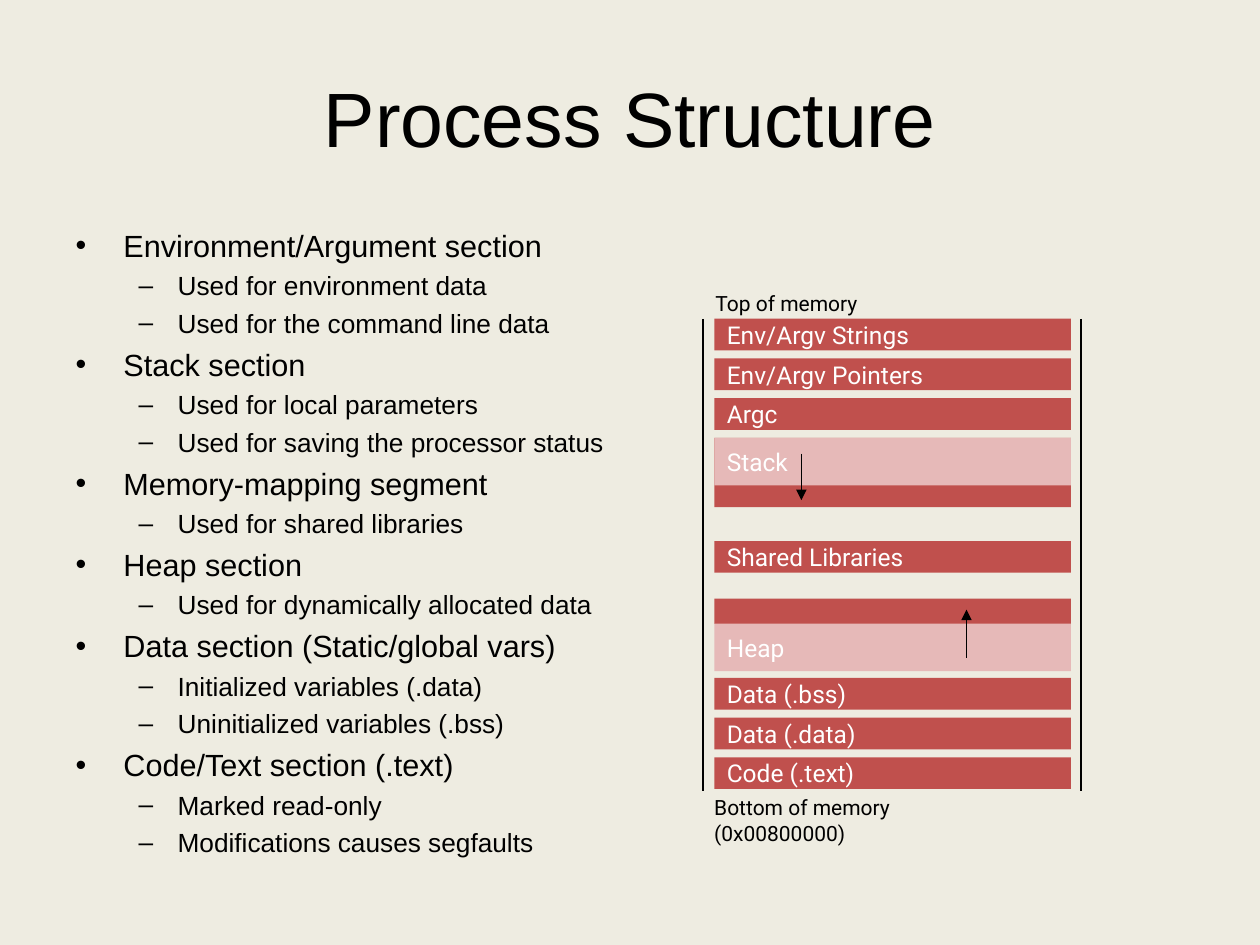
import pptx
import pptx.util
import pptx.dml.color
import pptx.enum.shapes
import pptx.enum.text
import pptx.oxml.ns
from lxml import etree

RGBColor = pptx.dml.color.RGBColor
Inches = pptx.util.Inches
Pt = pptx.util.Pt
ALIGN = pptx.enum.text.PP_ALIGN
ANCHOR = pptx.enum.text.MSO_ANCHOR
qn = pptx.oxml.ns.qn

BACKGROUND = RGBColor(0xEE, 0xEC, 0xE1)
BLACK = RGBColor(0x00, 0x00, 0x00)
WHITE = RGBColor(0xFF, 0xFF, 0xFF)
RED = RGBColor(0xC0, 0x50, 0x4D)
PINK = RGBColor(0xE6, 0xB9, 0xB8)

SECTIONS = [
    ("Environment/Argument section",
     ["Used for environment data", "Used for the command line data"]),
    ("Stack section",
     ["Used for local parameters", "Used for saving the processor status"]),
    ("Memory-mapping segment", ["Used for shared libraries"]),
    ("Heap section", ["Used for dynamically allocated data"]),
    ("Data section (Static/global vars)",
     ["Initialized variables (.data)", "Uninitialized variables (.bss)"]),
    ("Code/Text section (.text)",
     ["Marked read-only", "Modifications causes segfaults"]),
]

# Per list level: bullet, left indent, hanging indent, size, space before
LEVELS = [("•", 0.38, 0.38, 17.5, 4), ("–", 0.81, 0.31, 15, 3.5)]

ROW = 0.315  # pitch of the memory rows in inches
BAR = 0.8    # height of a plain bar in rows
# Memory bars: label, first row, height in rows, fill
BARS = [
    ("Env/Argv Strings", 0, BAR, RED),
    ("Env/Argv Pointers", 1, BAR, RED),
    ("Argc", 2, BAR, RED),
    ("", 3, 1.75, RED),
    ("Stack", 3, 1.2, PINK),
    ("Shared Libraries", 5.6, BAR, RED),
    ("", 7.05, 0.64, RED),
    ("Heap", 7.68, 1.2, PINK),
    ("Data (.bss)", 9.05, BAR, RED),
    ("Data (.data)", 10.05, BAR, RED),
    ("Code (.text)", 11.05, BAR, RED),
]
# Growth arrows: share of the bar width, start row, end row
ARROWS = [(0.244, 3.4, 4.57), (0.707, 8.54, 7.33)]


def place(shape, box):
    shape.left, shape.top, shape.width, shape.height = map(Inches, box)


def format_text(paragraph, size, color, name):
    paragraph.font.size = Pt(size)
    paragraph.font.color.rgb = color
    paragraph.font.name = name


def add_title(slide, box):
    title = slide.shapes.title
    place(title, box)
    title.text_frame.text = "Process Structure"
    title.text_frame.vertical_anchor = ANCHOR.MIDDLE
    paragraph = title.text_frame.paragraphs[0]
    paragraph.alignment = ALIGN.CENTER
    format_text(paragraph, 44, BLACK, "Arial")


def add_section_list(slide, box):
    body = slide.placeholders[1]
    place(body, box)
    frame = body.text_frame
    frame.auto_size = pptx.enum.text.MSO_AUTO_SIZE.NONE
    lines = [(text, level) for heading, details in SECTIONS
             for text, level in [(heading, 0)] + [(item, 1) for item in details]]
    frame.text = "\n".join(text for text, level in lines)
    for index, (paragraph, (text, level)) in enumerate(zip(frame.paragraphs, lines)):
        bullet, indent, hanging, size, space = LEVELS[level]
        paragraph.level = level
        paragraph.space_before = Pt(space if index else 0)
        properties = paragraph._p.get_or_add_pPr()
        properties.set("marL", str(Inches(indent)))
        properties.set("indent", str(-Inches(hanging)))
        etree.SubElement(properties, qn("a:buChar")).set("char", bullet)
        format_text(paragraph, size, BLACK, "Arial")


def add_line(slide, start, end, width, arrow=False):
    line = slide.shapes.add_connector(
        pptx.enum.shapes.MSO_CONNECTOR.STRAIGHT, *map(Inches, start + end))
    line.line.color.rgb = BLACK
    line.line.width = Pt(width)
    if arrow:
        outline = line.line._get_or_add_ln()
        etree.SubElement(outline, qn("a:tailEnd")).set("type", "triangle")
    etree.SubElement(line._element.spPr, qn("a:effectLst"))


def add_bar(slide, box, label, color):
    bar = slide.shapes.add_shape(
        pptx.enum.shapes.MSO_SHAPE.RECTANGLE, *map(Inches, box))
    bar.shadow.inherit = False
    bar.fill.solid()
    bar.fill.fore_color.rgb = color
    bar.line.fill.background()
    if label:
        frame = bar.text_frame
        frame.text = label
        frame.word_wrap = False
        frame.vertical_anchor = ANCHOR.MIDDLE
        frame.paragraphs[0].alignment = ALIGN.LEFT
        format_text(frame.paragraphs[0], 14, WHITE, "Roboto")


def add_caption(slide, box, text):
    caption = slide.shapes.add_textbox(*map(Inches, box))
    caption.text_frame.word_wrap = True
    caption.text_frame.text = text
    format_text(caption.text_frame.paragraphs[0], 12, BLACK, "Roboto")


def add_memory_map(slide, box):
    left, top, width, height = box
    add_caption(slide, (left - 0.09, top - 0.27, 2.33, 0.3), "Top of memory")
    add_caption(slide, (left - 0.1, top + height - 0.02, 2.49, 0.3),
                "Bottom of memory (0x00800000)")
    for label, row, rows, color in BARS:
        add_bar(slide, (left, top + row * ROW, width, rows * ROW), label, color)
    # Side rails
    for x in (left - 0.09, left + width + 0.08):
        add_line(slide, (x, top), (x, top + height), 1)
    # Growth of the stack and the heap
    for share, start, end in ARROWS:
        x = left + share * width
        add_line(slide, (x, top + start * ROW), (x, top + end * ROW), 0.75, arrow=True)


def main():
    presentation = pptx.Presentation()
    presentation.slide_width = Inches(10)
    presentation.slide_height = Inches(7.5)
    slide = presentation.slides.add_slide(presentation.slide_layouts[1])
    slide.background.fill.solid()
    slide.background.fill.fore_color.rgb = BACKGROUND
    add_title(slide, (0.5, 0.3, 9, 1.25))
    add_section_list(slide, (0.5, 1.75, 4.42, 4.95))
    add_memory_map(slide, (5.67, 2.53, 2.83, 3.75))
    presentation.save("out.pptx")


if __name__ == "__main__":
    main()
